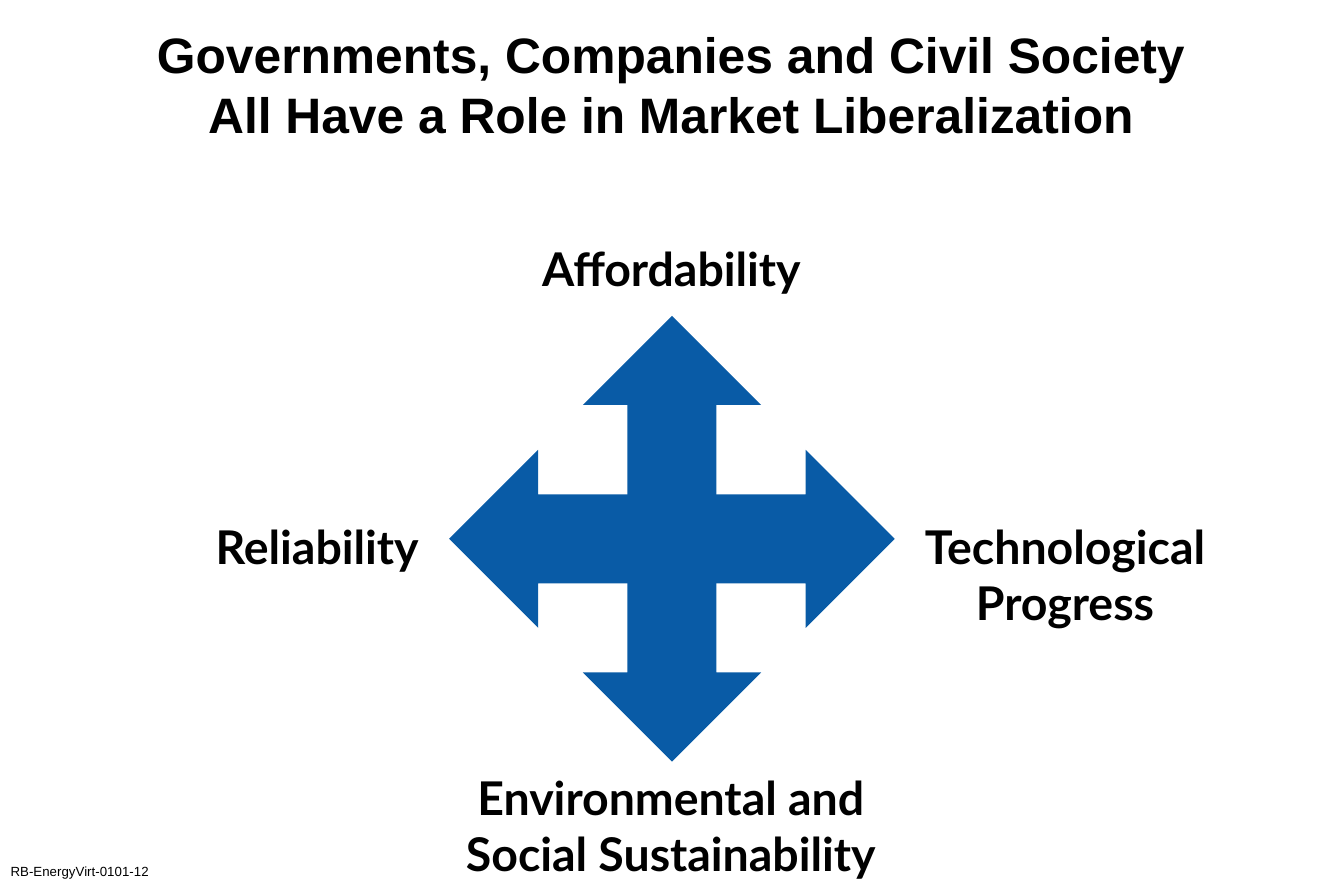
"""Build a slide on the four goals that market liberalization must balance."""
import pptx
import pptx.dml.color
import pptx.enum.shapes
import pptx.enum.text
import pptx.util

WIDTH, HEIGHT = 11.25, 7.5
COLORS = {"text": "000000", "arrow": "095BA6"}
TITLE = "Governments, Companies and Civil Society\vAll Have a Role in Market Liberalization"
TITLE_AREA = (1.02, 0.15, 9.2, 1.1)
REFERENCE = "RB-EnergyVirt-0101-12"
REFERENCE_AREA = (-0.01, 7.18, 1.74, 0.24)
GOALS = [
    (["Affordability"], (4.38, 1.96, 2.48, 0.57)),
    (["Technological", "Progress"], (7.51, 4.29, 2.81, 1.04)),
    (["Reliability"], (1.64, 4.29, 2.03, 0.57)),
    (["Environmental and", "Social Sustainability"], (3.63, 6.39, 3.97, 1.04)),
]
CROSS_CENTER = (WIDTH / 2, HEIGHT * 0.6 + 0.01)
ARROW_LENGTH, ARROW_BREADTH = 3.73, 1.49
ARROWS = [
    (pptx.enum.shapes.MSO_SHAPE.LEFT_RIGHT_ARROW, ARROW_LENGTH, ARROW_BREADTH),
    (pptx.enum.shapes.MSO_SHAPE.UP_DOWN_ARROW, ARROW_BREADTH, ARROW_LENGTH),
]
CENTER = pptx.enum.text.PP_ALIGN.CENTER
LEFT = pptx.enum.text.PP_ALIGN.LEFT


def inches(area):
    return [pptx.util.Inches(length) for length in area]


def color(name):
    return pptx.dml.color.RGBColor.from_string(COLORS[name])


def style_text(frame, font_name, size, bold, alignment):
    for para in frame.paragraphs:
        para.alignment = alignment
        para.font.name = font_name
        para.font.size = pptx.util.Pt(size)
        para.font.bold = bold
        para.font.color.rgb = color("text")


def add_title(page):
    title = page.shapes.title
    title.left, title.top, title.width, title.height = inches(TITLE_AREA)
    frame = title.text_frame
    frame.text = TITLE
    frame.word_wrap = True
    frame.auto_size = pptx.enum.text.MSO_AUTO_SIZE.NONE
    frame.vertical_anchor = pptx.enum.text.MSO_ANCHOR.MIDDLE
    style_text(frame, "Arial", 30, True, CENTER)


def add_label(page, lines, area, font_name, size, bold, alignment):
    frame = page.shapes.add_textbox(*inches(area)).text_frame
    frame.text = "\n".join(lines)
    frame.word_wrap = True
    style_text(frame, font_name, size, bold, alignment)


def add_cross(page):
    cross = page.shapes.add_group_shape()
    center_x, center_y = CROSS_CENTER
    for kind, width, height in ARROWS:
        area = (center_x - width / 2, center_y - height / 2, width, height)
        arrow = cross.shapes.add_shape(kind, *inches(area))
        arrow.adjustments[0] = 0.5
        arrow.adjustments[1] = 0.5
        arrow.shadow.inherit = False
        arrow.fill.solid()
        arrow.fill.fore_color.rgb = color("arrow")
        arrow.line.fill.background()


def main():
    deck = pptx.Presentation()
    deck.slide_width, deck.slide_height = inches((WIDTH, HEIGHT))
    page = deck.slides.add_slide(deck.slide_layouts[5])
    add_title(page)
    add_label(page, [REFERENCE], REFERENCE_AREA, "Arial", 8, False, LEFT)
    add_cross(page)
    for lines, area in GOALS:
        add_label(page, lines, area, "Lato", 28, True, CENTER)
    deck.save("out.pptx")


if __name__ == "__main__":
    main()
